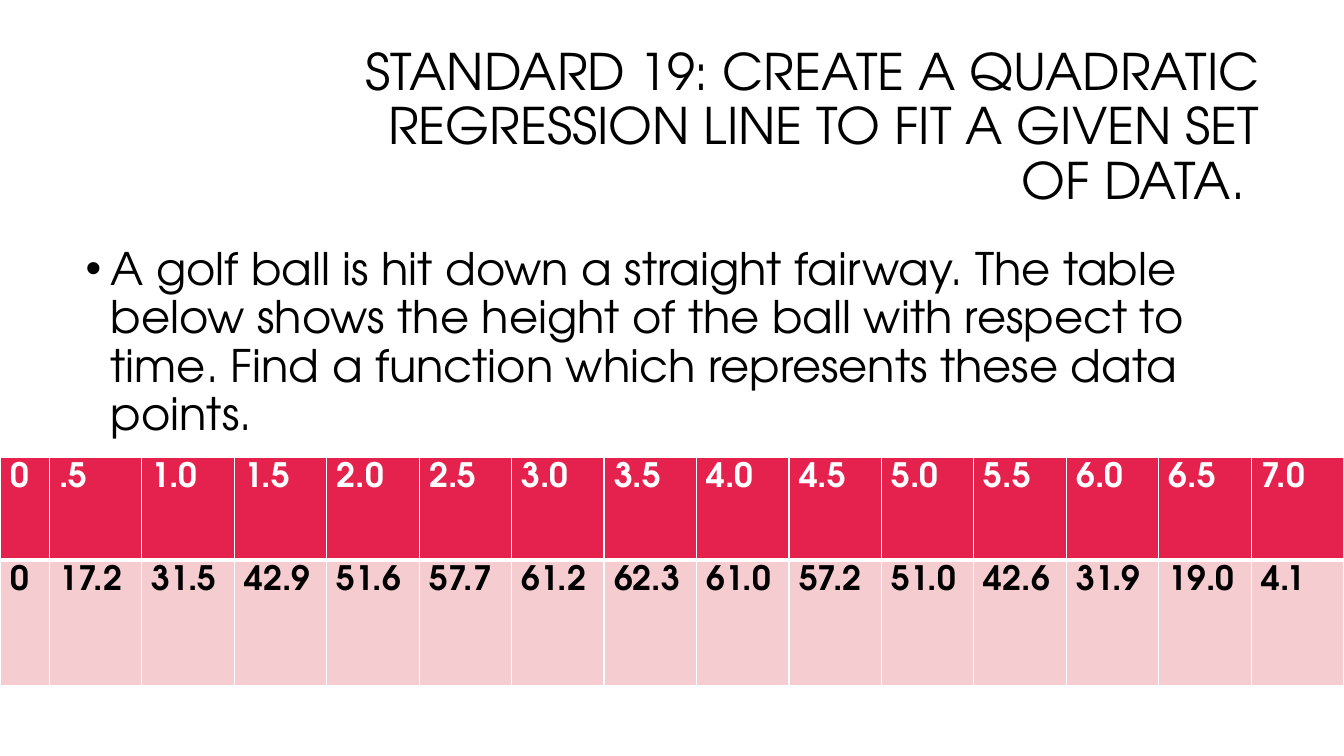
from lxml import etree
from pptx import Presentation
from pptx.dml.color import RGBColor
from pptx.enum.text import MSO_ANCHOR, PP_ALIGN
from pptx.oxml.ns import qn
from pptx.util import Inches, Pt

RIGHT = PP_ALIGN.RIGHT
MIDDLE = MSO_ANCHOR.MIDDLE
FONT = "TeX Gyre Adventor"
WIDE, HIGH = 13.33, 7.5
BLACK, WHITE, RED, PINK = "000000", "FFFFFF", "E5224E", "F5CDD0"

TITLE = "STANDARD 19: CREATE A QUADRATIC REGRESSION LINE TO FIT A GIVEN SET OF DATA. "
TASK = ("A golf ball is hit down a straight fairway. The table below shows the "
        "height of the ball with respect to time. Find a function which "
        "represents these data points.")
TIMES = "0 .5 1.0 1.5 2.0 2.5 3.0 3.5 4.0 4.5 5.0 5.5 6.0 6.5 7.0".split()
HEIGHTS = ("0 17.2 31.5 42.9 51.6 57.7 61.2 62.3 61.0 57.2 51.0 42.6 31.9 "
           "19.0 4.1").split()


def paint(target, tone):
    target.rgb = RGBColor.from_string(tone)


def style(para, size, tone, bold=False):
    font = para.font
    font.name, font.size, font.bold = FONT, Pt(size), bold
    paint(font.color, tone)


def add_text(slide, box, text, size):
    frame = slide.shapes.add_textbox(*map(Inches, box)).text_frame
    frame.word_wrap = True
    para = frame.paragraphs[0]
    para.text = text
    para.line_spacing = 0.9
    return frame, para


def add_title(slide, box):
    frame, para = add_text(slide, box, TITLE, 36)
    frame.vertical_anchor = MIDDLE
    frame.margin_bottom = Inches(0.59)
    para.alignment = RIGHT
    style(para, 36, BLACK)


def add_task(slide, box):
    frame, para = add_text(slide, box, TASK, 32)
    props = para._p.get_or_add_pPr()
    props.set("marL", str(Inches(0.25)))
    props.set("indent", str(-Inches(0.25)))
    etree.SubElement(props, qn("a:buFont")).set("typeface", "Arial")
    etree.SubElement(props, qn("a:buChar")).set("char", "•")
    style(para, 32, BLACK)


def add_edge(cell, side, width):
    props = cell._tc.get_or_add_tcPr()
    line = etree.SubElement(props, qn("a:ln" + side), w=str(Pt(width)))
    fill = etree.SubElement(line, qn("a:solidFill"))
    etree.SubElement(fill, qn("a:srgbClr"), val=WHITE)


def add_data(slide, box):
    rows = [(TIMES, RED, WHITE, 0.45, dict(L=1, R=1, T=1, B=3)),
            (HEIGHTS, PINK, BLACK, 0.55, dict(L=1, R=1, B=1))]
    count = len(TIMES)
    left, top, width, height = box
    table = slide.shapes.add_table(len(rows), count, *map(Inches, box)).table
    first = 0.49
    for col, column in enumerate(table.columns):
        column.width = Inches((width - first) / (count - 1) if col else first)
    for row, (values, back, ink, share, edges) in enumerate(rows):
        table.rows[row].height = Inches(height * share)
        for col, value in enumerate(values):
            cell = table.cell(row, col)
            for side, weight in edges.items():
                add_edge(cell, side, weight)
            cell.fill.solid()
            paint(cell.fill.fore_color, back)
            cell.text = value
            style(cell.text_frame.paragraphs[0], 24, ink, True)


def main():
    deck = Presentation()
    deck.slide_width, deck.slide_height = Inches(WIDE), Inches(HIGH)
    slide = deck.slides.add_slide(deck.slide_layouts[6])
    add_title(slide, (3.17, 0.84, 9.42, 1.41))
    add_task(slide, (0.75, 2.4, 11.83, 4.4))
    add_data(slide, (0, 4.54, WIDE, 2.26))
    deck.save("out.pptx")


if __name__ == "__main__":
    main()
